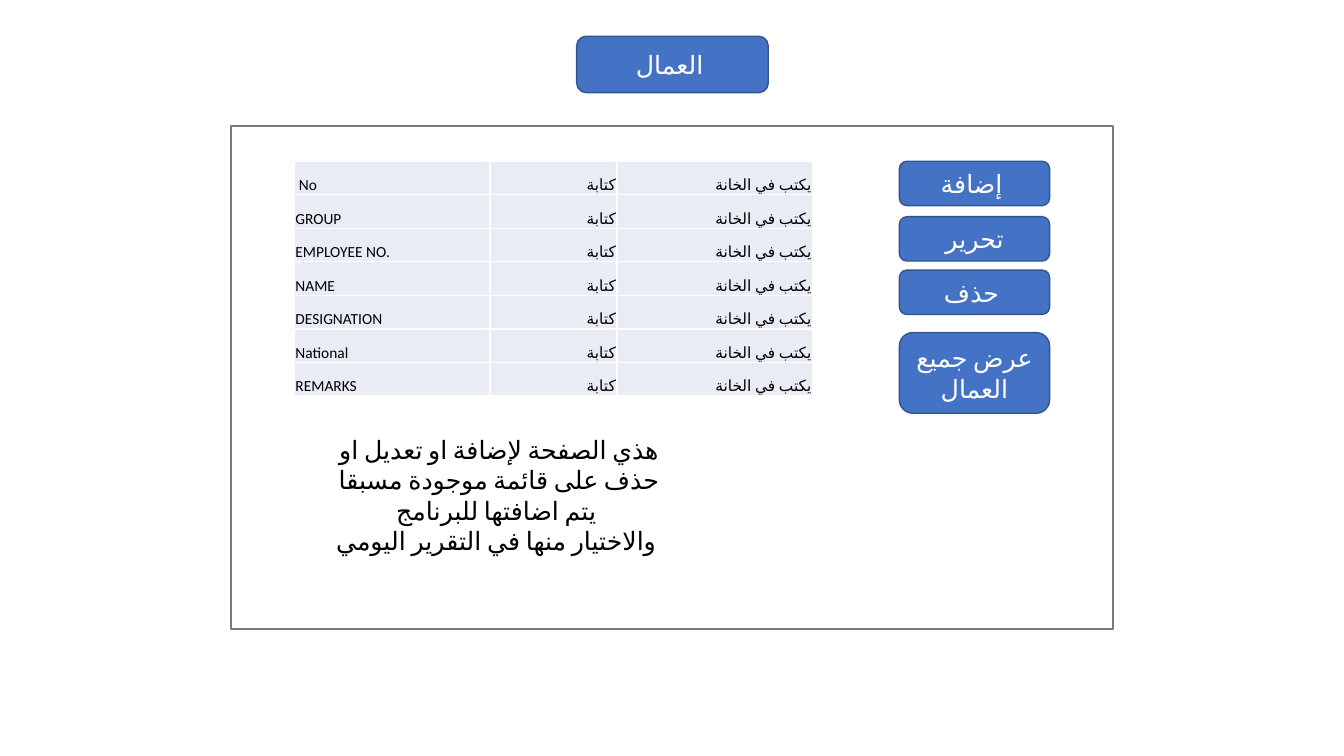
from lxml import etree
from pptx import Presentation
from pptx import util as u
from pptx.dml.color import RGBColor
from pptx.enum import shapes, text
from pptx.oxml import parse_xml
from pptx.oxml.ns import nsdecls, qn

PX = 9144  # 100 px to the inch
FONT = "Calibri"
BLUE = RGBColor(0x44, 0x72, 0xC4)
NAVY = RGBColor(0x32, 0x54, 0x91)
GRAY = RGBColor(0x7A, 0x7A, 0x7A)
PALE = RGBColor(0xE9, 0xEB, 0xF5)
WHITE = RGBColor(0xFF, 0xFF, 0xFF)
BLACK = RGBColor(0, 0, 0)
KIND = shapes.MSO_SHAPE
ALIGN = text.PP_ALIGN
ANCHOR = text.MSO_ANCHOR


def write(frame, *lines, size=18, color=BLACK, align=ALIGN.CENTER,
          anchor=ANCHOR.TOP, rtl=False, lang="ar-SA"):
    """Put one paragraph per line into a text frame."""
    frame.word_wrap = True
    frame.vertical_anchor = anchor
    for i, line in enumerate(lines):
        para = frame.add_paragraph() if i else frame.paragraphs[0]
        para.alignment = align
        if rtl:
            para._p.get_or_add_pPr().set("rtl", "1")
        run = para.add_run()
        run.text = line
        run.font.name = FONT
        run.font.size = u.Pt(size)
        run.font.color.rgb = color
        # Arabic letters take the complex-script font and language
        props = run._r.get_or_add_rPr()
        props.set("lang", lang)
        etree.SubElement(props, qn("a:cs")).set("typeface", FONT)


class Page:
    def __init__(self, deck):
        self.slide = deck.slides.add_slide(deck.slide_layouts[6])
        self.items = self.slide.shapes

    def shape(self, kind, box, line, fill=None):
        item = self.items.add_shape(kind, *(n * PX for n in box))
        item.shadow.inherit = False
        if fill is None:
            item.fill.background()
        else:
            item.fill.solid()
            item.fill.fore_color.rgb = fill
        item.line.color.rgb = line
        item.line.width = u.Pt(1)
        return item

    def button(self, label, *box):
        item = self.shape(KIND.ROUNDED_RECTANGLE, box, NAVY, BLUE)
        write(item.text_frame, label, color=WHITE, anchor=ANCHOR.MIDDLE)

    def note(self, lines, *box):
        item = self.items.add_textbox(*(n * PX for n in box))
        write(item.text_frame, *lines)

    def cell(self, cell, label, rtl):
        cell.margin_left = cell.margin_right = cell.margin_top = PX
        cell.margin_bottom = 0
        props = cell._tc.get_or_add_tcPr()
        for side in ("lnL", "lnR", "lnT", "lnB"):
            props.append(parse_xml(
                f'<a:{side} {nsdecls("a")} w="12700"><a:solidFill>'
                f'<a:srgbClr val="{WHITE}"/></a:solidFill></a:{side}>'))
        cell.fill.solid()
        cell.fill.fore_color.rgb = PALE
        write(cell.text_frame, label, size=11, rtl=rtl,
              align=ALIGN.RIGHT if rtl else ALIGN.LEFT,
              lang="ar-SA" if rtl else "en-US")
        cell.vertical_anchor = ANCHOR.BOTTOM

    def table(self, rows, cols, left, top, high):
        frame = self.items.add_table(len(rows), len(cols), left * PX, top * PX,
                                     sum(cols) * PX, high * PX)
        grid = frame.table
        grid.first_row = grid.horz_banding = False
        for col, wide in zip(grid.columns, cols):
            col.width = wide * PX
        for r, row in enumerate(rows):
            grid.rows[r].height = high * PX // len(rows)
            for c, label in enumerate(row):
                self.cell(grid.cell(r, c), label, rtl=c > 0)


def main():
    deck = Presentation()
    deck.slide_width, deck.slide_height = 1333 * PX, 750 * PX
    page = Page(deck)

    # Title and panel
    page.button("العمال ", 572, 36, 190, 56)
    page.shape(KIND.RECTANGLE, (229, 125, 875, 499), GRAY)

    # Action buttons
    for label, top, high in (("إضافة ", 160, 44), ("تحرير", 215, 44),
                             ("حذف ", 268, 44), ("عرض جميع العمال", 330, 80)):
        page.button(label, 892, top, 149, high)

    # Field table
    fields = (" No", "GROUP", "EMPLOYEE NO.", "NAME", "DESIGNATION",
              "National", "REMARKS")
    rows = [(field, "كتابة", "يكتب في الخانة ") for field in fields]
    page.table(rows, (194, 126, 194), 292, 160, 233)

    # Explanation
    page.note(("هذي الصفحة لإضافة او تعديل او حذف على قائمة موجودة مسبقا "
               "يتم اضافتها للبرنامج ",
               "والاختيار منها في التقرير اليومي "), 323, 426, 344, 131)

    deck.save("out.pptx")


if __name__ == "__main__":
    main()
